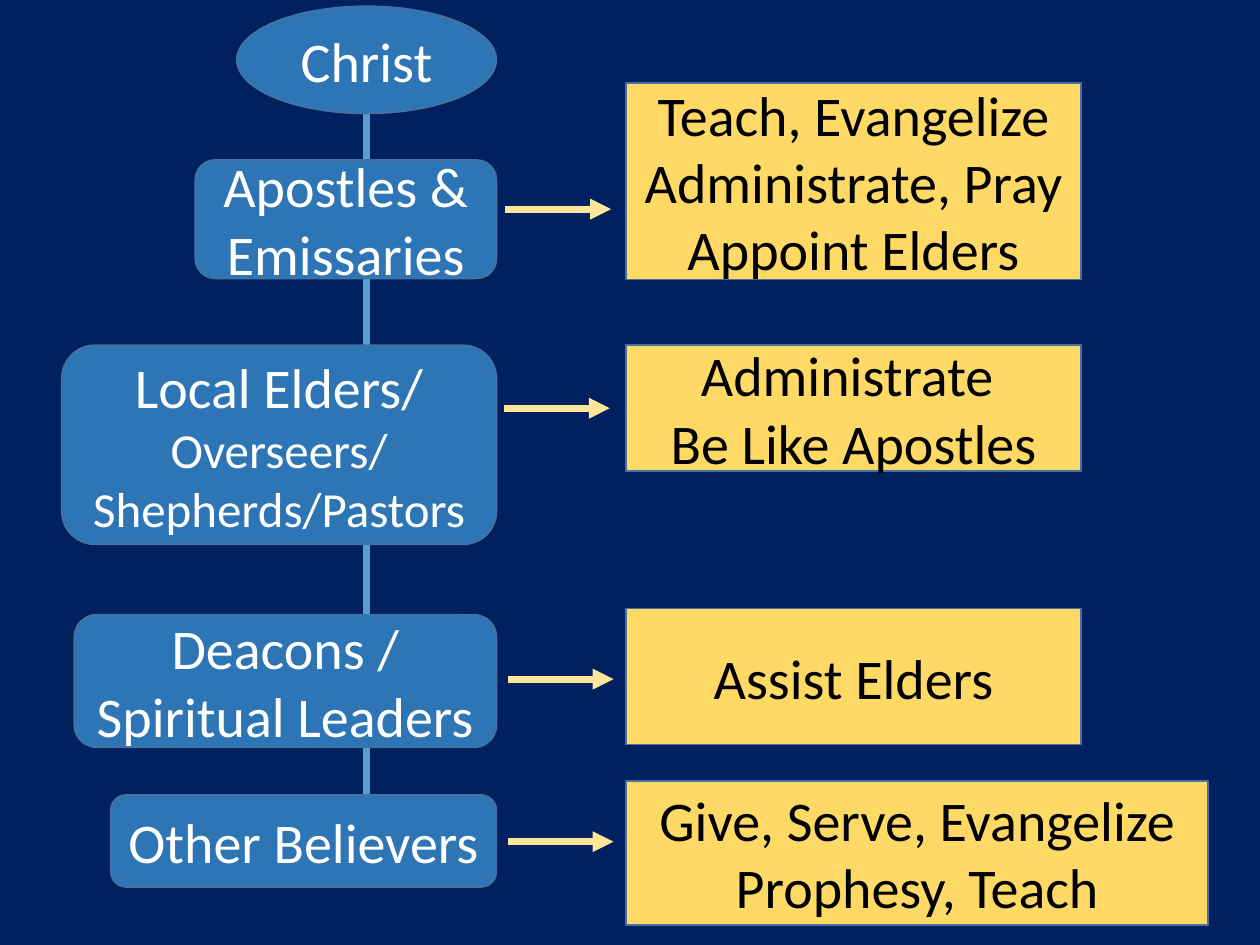
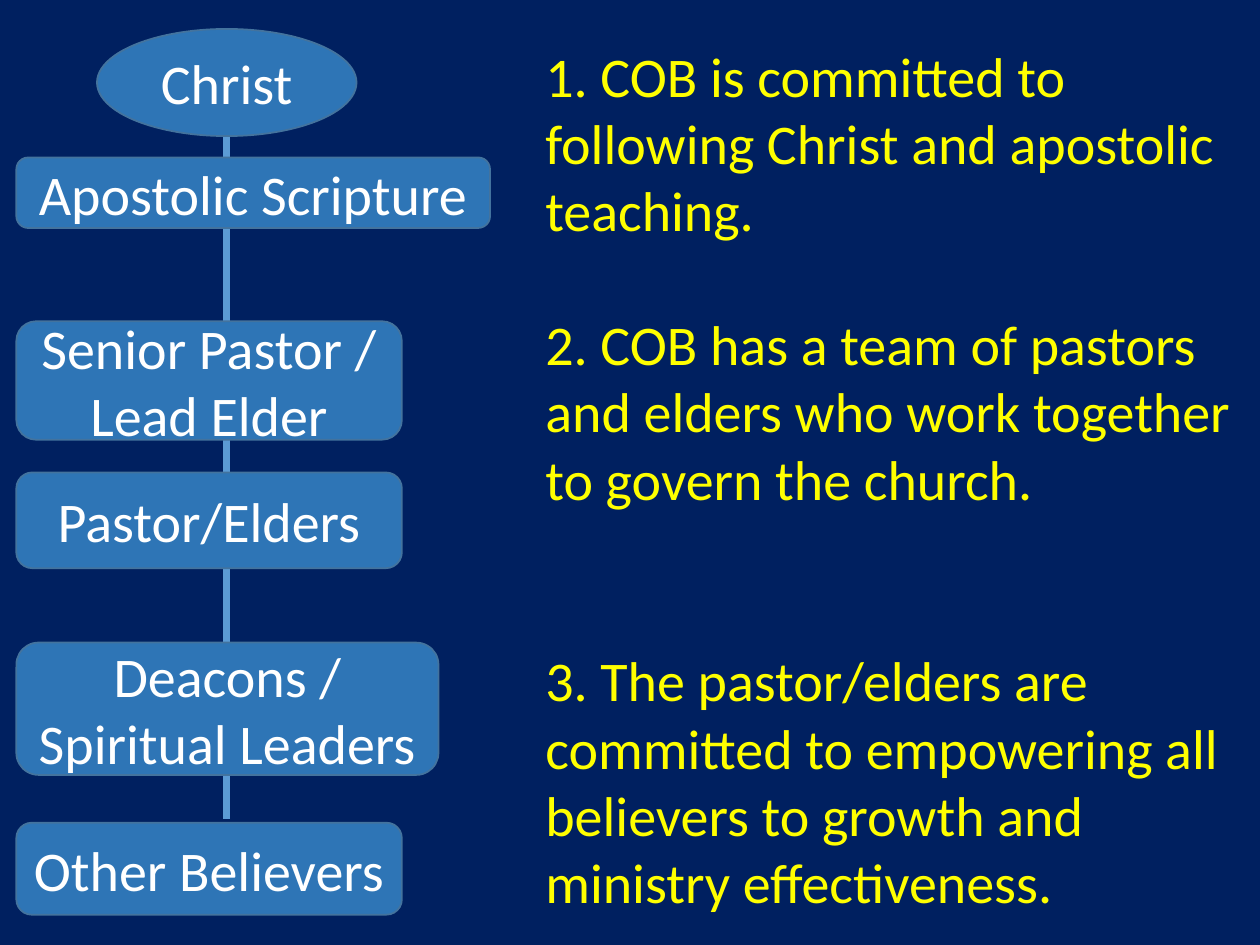
"""Build two slides on church leadership: the apostolic pattern and the local structure."""
import dataclasses
import typing

import lxml.etree
import pptx
import pptx.dml.color
import pptx.enum.shapes
import pptx.enum.text
import pptx.oxml.ns
import pptx.shapes.shapetree
import pptx.slide
import pptx.text.text
import pptx.util

PX = pptx.util.Inches(1) // 100
FONT = "Calibri"
TEXT_SIZE = 32
SMALL_SIZE = 28
LINE_WIDTH = 4
BLANK_LAYOUT = 6

NAVY = pptx.dml.color.RGBColor(0x00, 0x20, 0x60)
BLUE = pptx.dml.color.RGBColor(0x2E, 0x75, 0xB6)
EDGE = pptx.dml.color.RGBColor(0x43, 0x73, 0x9E)
SPINE = pptx.dml.color.RGBColor(0x5B, 0x9B, 0xD5)
GOLD = pptx.dml.color.RGBColor(0xFF, 0xD9, 0x66)
CREAM = pptx.dml.color.RGBColor(0xFF, 0xE6, 0x99)
YELLOW = pptx.dml.color.RGBColor(0xFF, 0xFF, 0x00)
WHITE = pptx.dml.color.RGBColor(0xFF, 0xFF, 0xFF)
BLACK = pptx.dml.color.RGBColor(0x00, 0x00, 0x00)

Kind = pptx.enum.shapes.MSO_SHAPE
Shapes = pptx.shapes.shapetree.SlideShapes | pptx.shapes.shapetree.GroupShapes


class Style(typing.NamedTuple):
    kind: Kind
    fill: pptx.dml.color.RGBColor
    ink: pptx.dml.color.RGBColor


HEAD = Style(Kind.OVAL, BLUE, WHITE)
ROLE = Style(Kind.ROUNDED_RECTANGLE, BLUE, WHITE)
DUTY = Style(Kind.RECTANGLE, GOLD, BLACK)


class Line(typing.NamedTuple):
    text: str
    size: int = TEXT_SIZE
    space_before: int = 0


@dataclasses.dataclass(frozen=True)
class Box:
    style: Style
    left: int
    top: int
    width: int
    height: int
    lines: tuple[Line, ...]


class Arrow(typing.NamedTuple):
    left: int
    y: int


ROLE_RIGHT = 394
DUTY_LEFT = 497
DUTY_WIDTH = 361
ARROW_LENGTH = 84
LOCAL_LEFT = 13
LOCAL_WIDTH = 306


def pattern_role(top: int, width: int, height: int, *lines: Line) -> Box:
    return Box(ROLE, ROLE_RIGHT - width, top, width, height, lines)


def duty(top: int, height: int, *texts: str, width: int = DUTY_WIDTH) -> Box:
    return Box(DUTY, DUTY_LEFT, top, width, height, tuple(map(Line, texts)))


def local_role(top: int, height: int, text: str, width: int = LOCAL_WIDTH) -> Box:
    return Box(ROLE, LOCAL_LEFT, top, width, height, (Line(text),))


def christ(left: int, top: int) -> Box:
    return Box(HEAD, left, top, 206, 85, (Line("Christ"),))


PATTERN_BOXES = (
    christ(188, 5),
    pattern_role(127, 239, 94, Line("Apostles & Emissaries")),
    pattern_role(274, 345, 158, Line("Local Elders/"), Line("Overseers/", SMALL_SIZE),
                 Line("Shepherds/Pastors", SMALL_SIZE)),
    pattern_role(488, 335, 105, Line("Deacons / Spiritual Leaders")),
    pattern_role(631, 306, 73, Line("Other Believers")),
    duty(66, 156, "Teach, Evangelize", "Administrate, Pray Appoint Elders"),
    duty(274, 100, "Administrate ", "Be Like Apostles"),
    duty(483, 108, "Assist Elders"),
    duty(620, 114, "Give, Serve, Evangelize Prophesy, Teach", width=462),
)
ARROWS = (Arrow(401, 166), Arrow(400, 324), Arrow(403, 539), Arrow(403, 668))

LOCAL_BOXES = (
    christ(77, 23),
    local_role(255, 94, "Senior Pastor / Lead Elder"),
    local_role(375, 76, "Pastor/Elders"),
    local_role(510, 105, "Deacons / Spiritual Leaders", width=335),
    local_role(653, 73, "Other Believers"),
)
SCRIPTURE = local_role(125, 56, "Apostolic Scripture", width=376)
COMMITMENTS = (
    Line("1. COB is committed to following Christ and apostolic teaching."),
    Line("2. COB has a team of pastors and elders who work together to govern the church.",
         space_before=38),
    Line("3. The pastor/elders are committed to empowering all believers to growth "
         "and ministry effectiveness.", space_before=77),
)


def write_lines(frame: pptx.text.text.TextFrame, lines: tuple[Line, ...],
                ink: pptx.dml.color.RGBColor, align: pptx.enum.text.PP_ALIGN) -> None:
    frame.word_wrap = True
    for index, line in enumerate(lines):
        para = frame.add_paragraph() if index else frame.paragraphs[0]
        para.alignment = align
        para.space_before = pptx.util.Pt(line.space_before)
        span = para.add_run()
        span.text = line.text
        span.font.name = FONT
        span.font.size = pptx.util.Pt(line.size)
        span.font.color.rgb = ink


def draw_box(shapes: Shapes, box: Box) -> None:
    shape = shapes.add_shape(box.style.kind, box.left * PX, box.top * PX,
                             box.width * PX, box.height * PX)
    shape.shadow.inherit = False
    shape.fill.solid()
    shape.fill.fore_color.rgb = box.style.fill
    shape.line.color.rgb = EDGE
    shape.line.width = pptx.util.Pt(1)
    shape.text_frame.vertical_anchor = pptx.enum.text.MSO_ANCHOR.MIDDLE
    write_lines(shape.text_frame, box.lines, box.style.ink, pptx.enum.text.PP_ALIGN.CENTER)


def draw_line(shapes: Shapes, start: tuple[int, int], end: tuple[int, int],
              color: pptx.dml.color.RGBColor, arrowhead: bool = False) -> None:
    line = shapes.add_connector(pptx.enum.shapes.MSO_CONNECTOR.STRAIGHT,
                                start[0] * PX, start[1] * PX, end[0] * PX, end[1] * PX)
    line.line.color.rgb = color
    line.line.width = pptx.util.Pt(LINE_WIDTH)
    if arrowhead:
        lxml.etree.SubElement(line.line._get_or_add_ln(),
                              pptx.oxml.ns.qn("a:tailEnd"), type="triangle")
    lxml.etree.SubElement(line._element.spPr, pptx.oxml.ns.qn("a:effectLst"))


def draw_chain(shapes: Shapes, x: int, top: int, bottom: int, boxes: tuple[Box, ...]) -> None:
    draw_line(shapes, (x, top), (x, bottom), SPINE)
    for box in boxes:
        draw_box(shapes, box)


def build_pattern(page: pptx.slide.Slide) -> None:
    draw_chain(page.shapes, 291, 89, 631, PATTERN_BOXES)
    for arrow in ARROWS:
        draw_line(page.shapes, (arrow.left, arrow.y),
                  (arrow.left + ARROW_LENGTH, arrow.y), CREAM, arrowhead=True)


def build_local(page: pptx.slide.Slide) -> None:
    draw_chain(page.shapes.add_group_shape().shapes, 180, 108, 650, LOCAL_BOXES)
    draw_box(page.shapes, SCRIPTURE)
    notes = page.shapes.add_textbox(423 * PX, 28 * PX, 577 * PX, 710 * PX)
    write_lines(notes.text_frame, COMMITMENTS, YELLOW, pptx.enum.text.PP_ALIGN.LEFT)


def main() -> None:
    deck = pptx.Presentation()
    deck.slide_width = 1000 * PX
    deck.slide_height = 750 * PX
    for build in (build_pattern, build_local):
        page = deck.slides.add_slide(deck.slide_layouts[BLANK_LAYOUT])
        page.background.fill.solid()
        page.background.fill.fore_color.rgb = NAVY
        build(page)
    deck.save("out.pptx")


if __name__ == "__main__":
    main()
